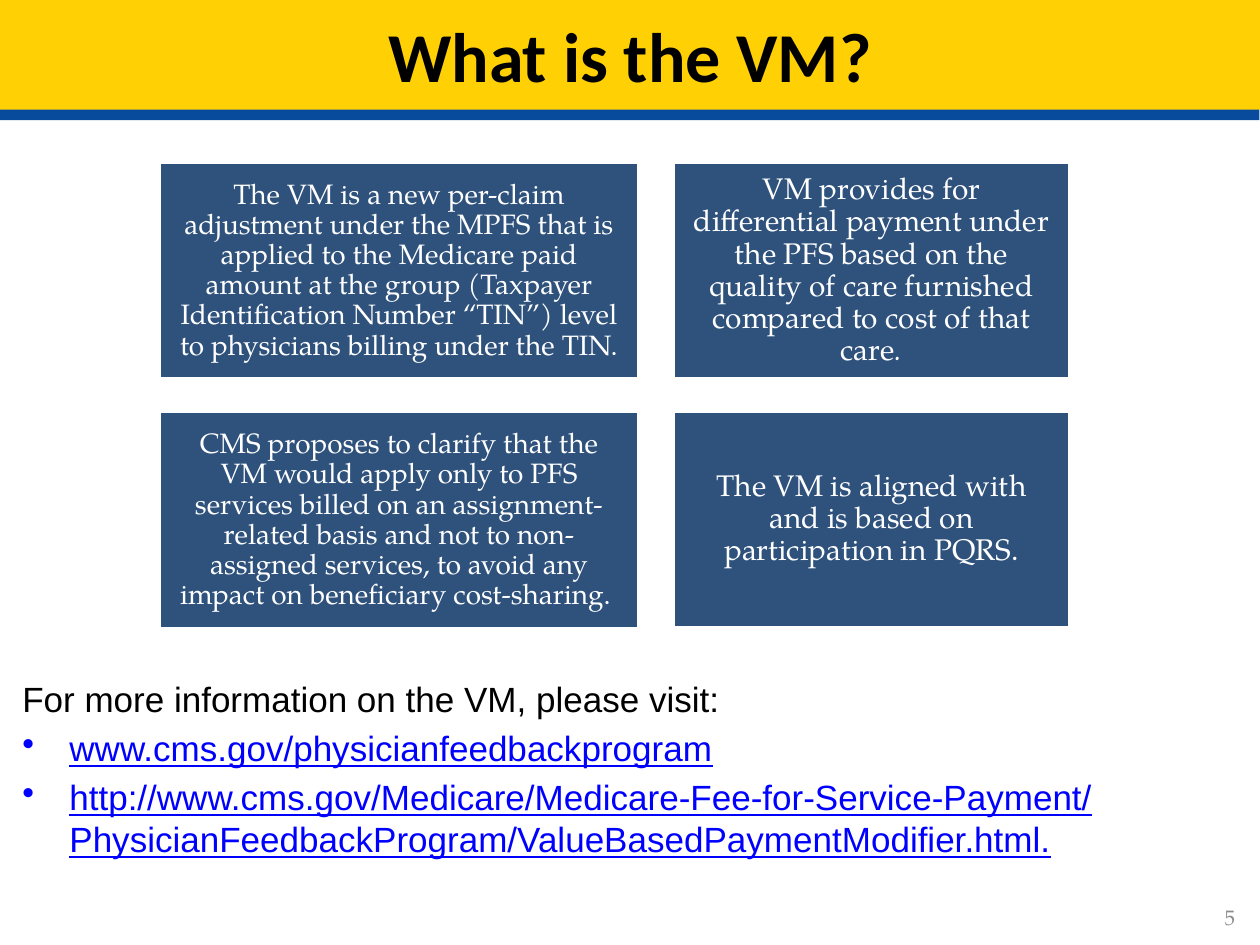
"""Build the slide that explains the VM in four cards with further links."""
from dataclasses import dataclass

from lxml.etree import SubElement
from pptx import Presentation
from pptx.dml.color import RGBColor
from pptx.enum.shapes import MSO_SHAPE as Preset
from pptx.enum.text import MSO_ANCHOR as Anchor, MSO_AUTO_SIZE as AutoSize, PP_ALIGN as Align
from pptx.oxml.ns import qn
from pptx.util import Cm, Pt

YELLOW = RGBColor(0xFF, 0xD0, 0x04)
BLUE = RGBColor(0x08, 0x4A, 0x9C)
NAVY = RGBColor(0x2F, 0x52, 0x7D)
LINK = RGBColor(0x00, 0x00, 0xFF)
GREY = RGBColor(0x8C, 0x8C, 0x8C)
BLACK = RGBColor(0, 0, 0)
WHITE = RGBColor(0xFF, 0xFF, 0xFF)
SERIF = "TeX Gyre Pagella"
CARD_HEIGHT = Cm(4.43)


@dataclass
class Card:
    left: float
    top: float
    width: float
    size: int
    text: str
    italic_end: str = ""


CARDS = [
    Card(3.18, 3.24, 9.73, 16, "The VM is a new per-claim adjustment under the MPFS that is applied "
         "to the Medicare paid amount at the group (Taxpayer Identification Number “TIN”) level "
         "to physicians billing under the TIN."),
    Card(13.55, 3.24, 8.04, 17, "VM provides for differential payment under the PFS based on the "
         "quality of care furnished compared to cost of that care", "."),
    Card(3.18, 8.27, 9.73, 16, "CMS proposes to clarify that the VM would apply only to PFS services "
         "billed on an assignment-related basis and not to non-assigned services, to avoid any "
         "impact on beneficiary cost-sharing. "),
    Card(13.55, 8.25, 8.04, 17, "The VM is aligned with and is based on participation in PQRS."),
]
LINKS = [
    "www.cms.gov/physicianfeedbackprogram",
    "http://www.cms.gov/Medicare/Medicare-Fee-for-Service-Payment/"
    "PhysicianFeedbackProgram/ValueBasedPaymentModifier.html.",
]


def style(paragraph, name: str, size: int, color: RGBColor, align=Align.LEFT) -> None:
    paragraph.alignment = align
    font = paragraph.font
    font.name, font.size = name, Pt(size)
    font.color.rgb = color


def add_title(page) -> None:
    title = page.shapes.title
    title.left, title.top, title.width, title.height = 0, 0, Cm(25.4), Cm(2.21)
    title.fill.solid()
    title.fill.fore_color.rgb = YELLOW
    effects = SubElement(title._element.spPr, qn("a:effectLst"))
    shadow = SubElement(effects, qn("a:outerShdw"), dist=str(Pt(6)), dir="5640000",
                        algn="t", rotWithShape="0")
    SubElement(shadow, qn("a:srgbClr"), val=str(BLUE))
    frame = title.text_frame
    frame.text = "What is the VM?"
    frame.auto_size = AutoSize.NONE
    frame.vertical_anchor = Anchor.MIDDLE
    style(frame.paragraphs[0], "Calibri", 40, BLACK, Align.CENTER)
    frame.paragraphs[0].font.bold = True


def add_card(page, card: Card) -> None:
    box = page.shapes.add_shape(Preset.RECTANGLE, Cm(card.left), Cm(card.top),
                                Cm(card.width), CARD_HEIGHT)
    box.shadow.inherit = False
    box.fill.solid()
    box.fill.fore_color.rgb = NAVY
    box.line.color.rgb = WHITE
    box.line.width = Pt(3.78)
    frame = box.text_frame
    frame.word_wrap = True
    frame.vertical_anchor = Anchor.MIDDLE
    frame.margin_left = frame.margin_right = Cm(0.38)
    frame.margin_top = frame.margin_bottom = Cm(0.21)
    para = frame.paragraphs[0]
    para.line_spacing = 0.9
    style(para, SERIF, card.size, WHITE, Align.CENTER)
    para.add_run().text = card.text
    if card.italic_end:
        span = para.add_run()
        span.text = card.italic_end
        span.font.italic = True


def add_bullet(paragraph) -> None:
    properties = paragraph._p.get_or_add_pPr()
    properties.set("marL", str(Cm(0.95)))
    properties.set("indent", str(-Cm(0.95)))
    bullet = properties.makeelement(qn("a:buChar"), {"char": "•"})
    properties.find(qn("a:defRPr")).addprevious(bullet)


def add_links(page) -> None:
    box = page.shapes.add_textbox(Cm(0.2), Cm(13.54), Cm(24.97), Cm(4.24))
    frame = box.text_frame
    frame.word_wrap = True
    intro = frame.paragraphs[0]
    intro.text = "For more information on the VM, please visit:"
    style(intro, "Arial", 20, BLACK)
    for address in LINKS:
        para = frame.add_paragraph()
        para.text = address
        style(para, "Arial", 20, LINK)
        para.font.underline = True
        add_bullet(para)
    for para in frame.paragraphs:
        para.space_before = Pt(4)


def add_page_number(page) -> None:
    box = page.shapes.add_textbox(Cm(19.23), Cm(17.98), Cm(5.92), Cm(1.02))
    frame = box.text_frame
    frame.word_wrap = True
    frame.vertical_anchor = Anchor.MIDDLE
    frame.text = "5"
    style(frame.paragraphs[0], SERIF, 12, GREY, Align.RIGHT)


def main() -> None:
    deck = Presentation()
    deck.slide_width, deck.slide_height = Cm(25.4), Cm(19.05)
    page = deck.slides.add_slide(deck.slide_layouts[5])
    add_title(page)
    add_links(page)
    for card in CARDS:
        add_card(page, card)
    add_page_number(page)
    deck.save("out.pptx")


if __name__ == "__main__":
    main()
